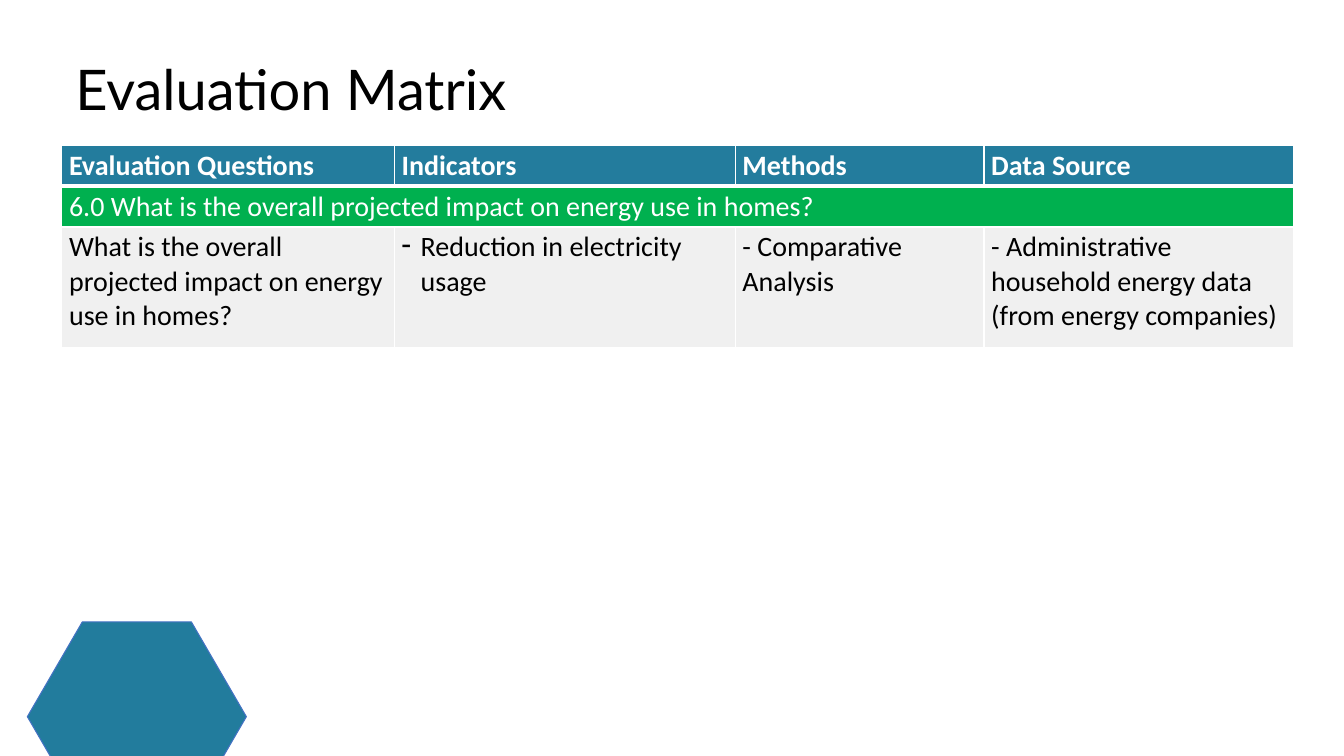
from dataclasses import dataclass

from lxml import etree
from pptx import Presentation
from pptx.dml.color import RGBColor
from pptx.enum import shapes, text
from pptx.oxml import ns
from pptx.util import Cm, Pt


@dataclass(frozen=True)
class Theme:
    title_font: str = "Lato"
    table_font: str = "Calibri"
    title_size: int = 40
    title_leading: int = 52
    table_size: int = 20
    black: str = "000000"
    white: str = "FFFFFF"
    header: str = "237C9D"
    question: str = "00B04F"
    body: str = "F0F0F0"
    hexagon: str = "227C9D"
    hexagon_line: str = "4472C4"


THEME = Theme()

COLUMN_WIDTHS = (8.38, 8.59, 6.27, 7.8)
ROW_HEIGHTS = (0.94, 0.69, 3.05)
HEADINGS = ("Evaluation Questions", "Indicators", "Methods", "Data Source")
QUESTION = "6.0 What is the overall projected impact on energy use in homes?"
ANSWERS = (
    "What is the overall projected impact on energy use in homes?",
    "Reduction in electricity usage",
    "- Comparative Analysis",
    "- Administrative household energy data (from energy companies)",
)


def rgb(colour):
    return RGBColor.from_string(colour)


def format_paragraph(paragraph, font, size, colour, bold=False):
    for run in paragraph.runs:
        run.font.name = font
        run.font.size = Pt(size)
        run.font.bold = bold
        run.font.color.rgb = rgb(colour)


def add_title(slide, left, top, width, height):
    title = slide.shapes.title
    title.left, title.top = Cm(left), Cm(top)
    title.width, title.height = Cm(width), Cm(height)
    frame = title.text_frame
    frame.text = "Evaluation Matrix"
    frame.word_wrap = True
    frame.auto_size = text.MSO_AUTO_SIZE.NONE
    frame.vertical_anchor = text.MSO_ANCHOR.TOP
    frame.margin_left = frame.margin_right = frame.margin_top = frame.margin_bottom = 0
    paragraph = frame.paragraphs[0]
    paragraph.alignment = text.PP_ALIGN.LEFT
    paragraph.line_spacing = Pt(THEME.title_leading)
    format_paragraph(paragraph, THEME.title_font, THEME.title_size, THEME.black)


def add_hexagon(slide, left, top, width, height):
    hexagon = slide.shapes.add_shape(
        shapes.MSO_SHAPE.HEXAGON, Cm(left), Cm(top), Cm(width), Cm(height))
    hexagon.adjustments[0] = 0.29
    hexagon.shadow.inherit = False
    hexagon.fill.solid()
    hexagon.fill.fore_color.rgb = rgb(THEME.hexagon)
    hexagon.line.color.rgb = rgb(THEME.hexagon_line)
    hexagon.line.width = Pt(0.75)


def set_borders(cell, bottom_width=1):
    properties = cell._tc.get_or_add_tcPr()
    widths = {"a:lnL": 1, "a:lnR": 1, "a:lnT": 1, "a:lnB": bottom_width}
    # Borders come before the fill in the cell properties
    for index, (tag, width) in enumerate(widths.items()):
        line = etree.Element(ns.qn(tag), w=str(Pt(width)))
        fill = etree.SubElement(line, ns.qn("a:solidFill"))
        etree.SubElement(fill, ns.qn("a:srgbClr"), val=THEME.white)
        properties.insert(index, line)


def set_dash_bullet(paragraph):
    properties = paragraph._p.get_or_add_pPr()
    properties.set("marL", str(Cm(0.48)))
    properties.set("indent", str(-Cm(0.48)))
    etree.SubElement(properties, ns.qn("a:buChar"), char="-")


def fill_cell(cell, wording, fill, colour, bold=False):
    cell.margin_left = cell.margin_right = Cm(0.18)
    cell.margin_top = cell.margin_bottom = Cm(0.08)
    cell.fill.solid()
    cell.fill.fore_color.rgb = rgb(fill)
    set_borders(cell, 3 if bold else 1)
    cell.text_frame.text = wording
    format_paragraph(cell.text_frame.paragraphs[0],
                     THEME.table_font, THEME.table_size, colour, bold)


def add_matrix(slide, left, top):
    table = slide.shapes.add_table(
        len(ROW_HEIGHTS), len(COLUMN_WIDTHS), Cm(left), Cm(top),
        Cm(sum(COLUMN_WIDTHS)), Cm(sum(ROW_HEIGHTS))).table
    table.horz_banding = False
    for column, width in zip(table.columns, COLUMN_WIDTHS):
        column.width = Cm(width)
    for row, height in zip(table.rows, ROW_HEIGHTS):
        row.height = Cm(height)

    # Headings and answers, column by column
    for index, (heading, answer) in enumerate(zip(HEADINGS, ANSWERS)):
        fill_cell(table.cell(0, index), heading, THEME.header, THEME.white, bold=True)
        fill_cell(table.cell(2, index), answer, THEME.body, THEME.black)
    set_dash_bullet(table.cell(2, 1).text_frame.paragraphs[0])

    # Question band across all columns
    table.cell(1, 0).merge(table.cell(1, len(COLUMN_WIDTHS) - 1))
    fill_cell(table.cell(1, 0), QUESTION, THEME.question, THEME.white)


def main():
    presentation = Presentation()
    presentation.slide_width, presentation.slide_height = Cm(33.87), Cm(19.05)
    slide = presentation.slides.add_slide(presentation.slide_layouts[5])
    add_title(slide, 1.9, 1.22, 19.94, 1.78)
    add_hexagon(slide, 0.69, 15.67, 5.52, 4.78)
    add_matrix(slide, 1.56, 3.67)
    presentation.save("out.pptx")


if __name__ == "__main__":
    main()
